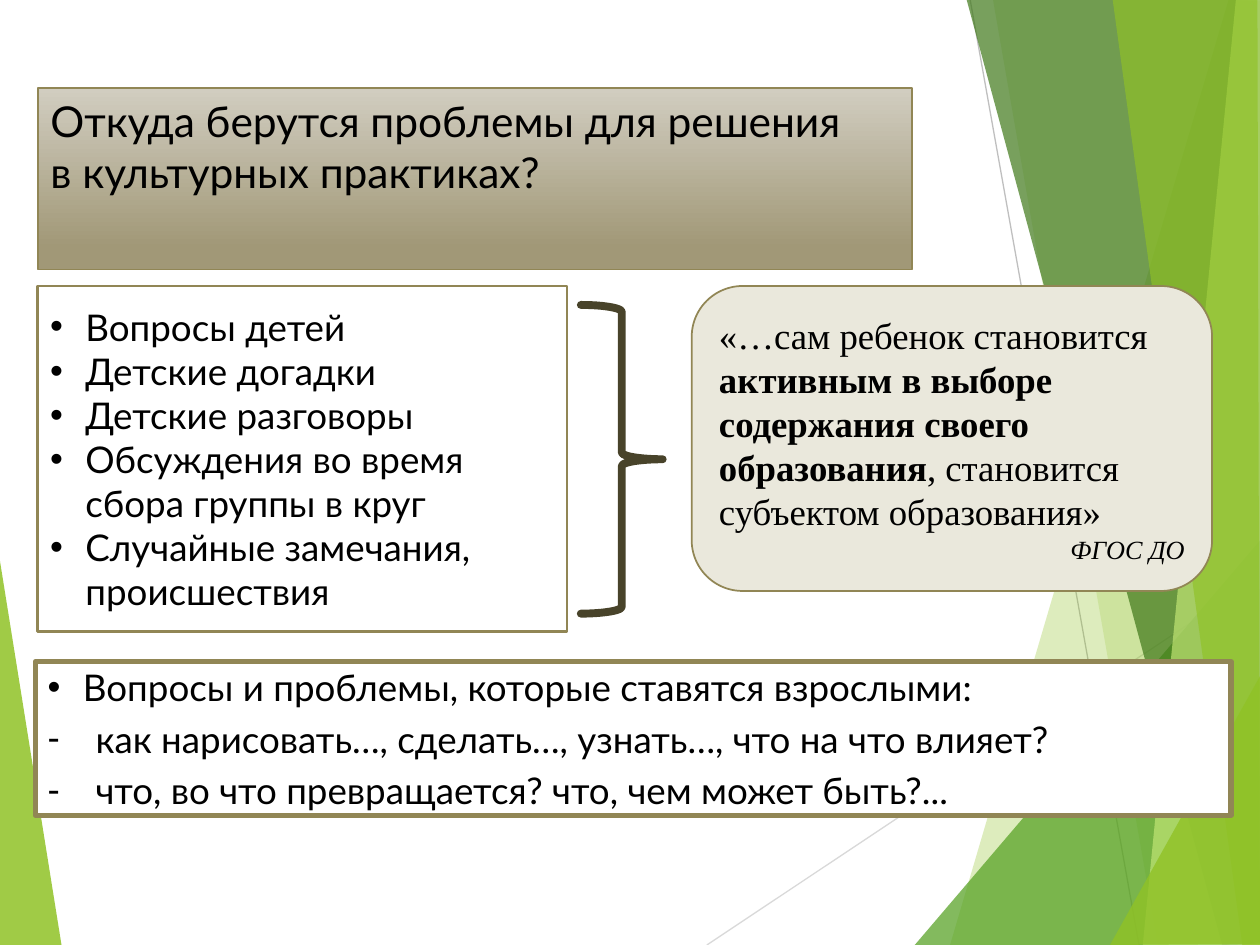
from pptx import Presentation
from pptx import util as u
from pptx.dml import color
from pptx.enum import shapes, text
from pptx.oxml.ns import qn
from lxml import etree

PX = 9144  # 100 px to the inch
W, H = 1000, 750
OLIVE, BLACK = "918655", "000000"
SANS = {"name": "Lato", "size": u.Pt(21)}
SERIF = {"name": "Times New Roman", "size": u.Pt(21)}

# Background facets: colour, opacity in percent, corners
LEFT_FACET = ("90C226", 85, [(-1, 439), (49, 751), (-1, 750)])
RIGHT_FACETS = [
    ("90C226", 30, [(975, 0), (754, 750), (1002, 751), (1001, 1)]),
    ("90C226", 20, [(788, -1), (919, 750), (1001, 750), (1001, -1)]),
    ("54A021", 72, [(726, 750), (1000, 429), (1001, 750)]),
    ("3F7819", 70, [(767, -1), (970, 750), (1001, 749), (1001, -1)]),
    ("C0E474", 70, [(981, -1), (907, 750), (1001, 750), (1000, -1)]),
    ("90C226", 65, [(883, -1), (986, 750), (1000, 750), (998, -1)]),
    ("90C226", 80, [(881, 750), (1001, 535), (1001, 749)]),
]
RAYS = [("D9D9D9", (561, 750), (1001, 457)), ("BFBFBF", (770, 0), (904, 750))]


def px(*values):
    return [u.Emu(v * PX) for v in values]


def rgb(value):
    return color.RGBColor.from_string(value)


def set_line(sp, value, width):
    sp.line.color.rgb = rgb(value)
    sp.line.width = u.Pt(width)


def add_facet(s, value, opacity, corners):
    builder = s.shapes.build_freeform(*corners[0], scale=PX)
    builder.add_line_segments(corners[1:], close=True)
    sp = builder.convert_to_shape()
    sp.shadow.inherit = False
    sp.line.fill.background()
    sp.fill.solid()
    sp.fill.fore_color.rgb = rgb(value)
    clr = sp.fill._xPr.find(qn("a:solidFill"))[0]
    etree.SubElement(clr, qn("a:alpha")).set("val", str(opacity * 1000))


def add_background(s):
    add_facet(s, *LEFT_FACET)
    for value, start, end in RAYS:
        line = s.shapes.add_connector(shapes.MSO_CONNECTOR.STRAIGHT, *px(*start, *end))
        set_line(line, value, 0.75)
        etree.SubElement(line._element.spPr, qn("a:effectLst"))
    for facet in RIGHT_FACETS:
        add_facet(s, *facet)


def add_run(p, words, font, **extra):
    r = p.add_run()
    r.text = words
    r.font.color.rgb = rgb(BLACK)
    for name, value in {**font, **extra}.items():
        setattr(r.font, name, value)


def add_bullet(p, mark, indent):
    pPr = p._p.get_or_add_pPr()
    pPr.set("marL", str(indent * PX))
    pPr.set("indent", str(-indent * PX))
    etree.SubElement(pPr, qn("a:buFont")).set("typeface", "Arial")
    etree.SubElement(pPr, qn("a:buChar")).set("char", mark)


def add_box(s, kind, box, fill, line_width):
    sp = s.shapes.add_shape(kind, *px(*box))
    sp.shadow.inherit = False
    set_line(sp, OLIVE, line_width)
    sp.fill.solid()
    sp.fill.fore_color.rgb = rgb(fill)
    sp.text_frame.word_wrap = True
    sp.text_frame.vertical_anchor = text.MSO_ANCHOR.MIDDLE
    return sp


def add_title(s, box, words):
    sp = s.shapes.title
    sp.left, sp.top, sp.width, sp.height = px(*box)
    set_line(sp, OLIVE, 1)
    sp.fill.gradient()
    sp.fill.gradient_angle = 270
    for stop, (position, value) in zip(sp.fill.gradient_stops, [(0, "D1CDC0"), (0.88, "A19877")]):
        stop.position = position
        stop.color.rgb = rgb(value)
    tf = sp.text_frame
    tf.word_wrap = True
    tf.auto_size = text.MSO_AUTO_SIZE.NONE
    tf.vertical_anchor = text.MSO_ANCHOR.TOP
    p = tf.paragraphs[0]
    p.alignment = text.PP_ALIGN.LEFT
    for i, part in enumerate(words):
        if i:
            p.add_line_break()
        add_run(p, part, SANS, size=u.Pt(24.3))


def add_list(s, box, items, line_width, space=0):
    """Items are (mark, indent, words)."""
    tf = add_box(s, shapes.MSO_SHAPE.RECTANGLE, box, "FFFFFF", line_width).text_frame
    for i, (mark, indent, words) in enumerate(items):
        p = tf.add_paragraph() if i else tf.paragraphs[0]
        p.alignment = text.PP_ALIGN.LEFT
        p.space_before = u.Pt(space)
        add_bullet(p, mark, indent)
        add_run(p, words, SANS)


def add_brace(s, box):
    sp = s.shapes.add_shape(shapes.MSO_SHAPE.RIGHT_BRACE, *px(*box))
    sp.shadow.inherit = False
    sp.fill.background()
    set_line(sp, "48432A", 4.5)
    sp.line._get_or_add_ln().set("cap", "rnd")


def add_quote(s, box, parts, author):
    tf = add_box(s, shapes.MSO_SHAPE.ROUNDED_RECTANGLE, box, "EAE8DC", 1).text_frame
    p = tf.paragraphs[0]
    p.alignment = text.PP_ALIGN.LEFT
    for words, bold in parts:
        add_run(p, words, SERIF, bold=bold)
    p = tf.add_paragraph()
    p.alignment = text.PP_ALIGN.RIGHT
    add_run(p, author, SERIF, size=u.Pt(15), italic=True)


def main():
    prs = Presentation()
    prs.slide_width, prs.slide_height = px(W, H)
    s = prs.slides.add_slide(prs.slide_layouts[5])
    add_background(s)

    # Title, raised above the background
    add_title(s, (30, 70, 694, 144),
              ["Откуда берутся проблемы для решения ", "в культурных практиках?"])
    s.shapes._spTree.append(s.shapes.title._element)

    # Sources of problems, leading to the quotation
    add_brace(s, (461, 242, 65, 245))
    add_quote(s, (549, 227, 413, 242), [
        ("«…сам ребенок становится ", False),
        ("активным в выборе содержания своего образования", True),
        (", становится субъектом образования»", False),
    ], "ФГОС ДО")
    sources = ["Вопросы детей", "Детские догадки", "Детские разговоры",
               "Обсуждения во время сбора группы в круг",
               "Случайные замечания, происшествия"]
    add_list(s, (30, 227, 420, 274), [("•", 28, words) for words in sources], 1.5)

    # Questions set by adults
    add_list(s, (28, 525, 949, 122), [
        ("•", 28, "Вопросы и проблемы, которые ставятся взрослыми:"),
        ("-", 38, "как нарисовать…, сделать…, узнать…, что на что влияет?"),
        ("-", 38, "что, во что превращается? что, чем может быть?..."),
    ], 3, space=4.2)
    prs.save("out.pptx")


if __name__ == "__main__":
    main()
